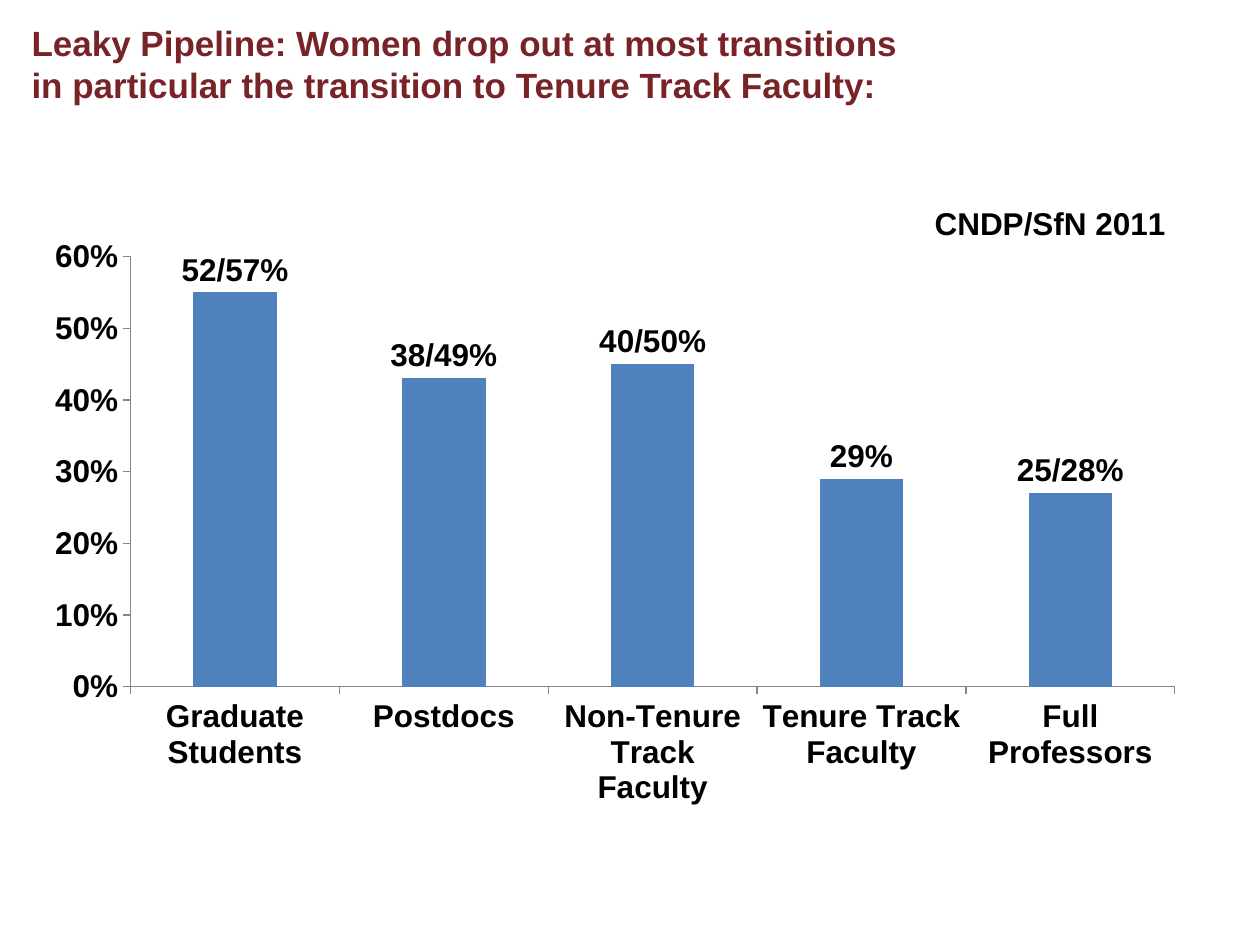
from dataclasses import dataclass
from typing import Optional

import pptx
import pptx.chart.data
import pptx.dml.color
import pptx.enum.chart
import pptx.enum.text
import pptx.oxml
import pptx.oxml.ns
import pptx.util

Inches = pptx.util.Inches
Pt = pptx.util.Pt
RGBColor = pptx.dml.color.RGBColor
qn = pptx.oxml.ns.qn

MAROON = RGBColor(0x78, 0x23, 0x27)
BLUE = RGBColor(0x4F, 0x81, 0xBD)
GRAY = RGBColor(0x86, 0x86, 0x86)
BLACK = RGBColor(0, 0, 0)
FONT = "Arial"


@dataclass
class Stage:
    name: str
    share: float
    label: Optional[str] = None


STAGES = [
    Stage("Graduate Students", 0.55, "52/57%"),
    Stage("Postdocs", 0.43, "38/49%"),
    Stage("Non-Tenure Track Faculty", 0.45, "40/50%"),
    Stage("Tenure Track Faculty", 0.29),
    Stage("Full Professors", 0.27, "25/28%"),
]


def style_font(font, size: int, color: RGBColor) -> None:
    font.name = FONT
    font.size = Pt(size)
    font.bold = True
    font.color.rgb = color


def set_layout(parent, index: int, **settings) -> None:
    """Give a chart part a manual layout, as child number index."""
    for old in parent.findall(qn("c:layout")):
        parent.remove(old)
    items = "".join(f'<c:{k} val="{v}"/>' for k, v in settings.items())
    parent.insert(index, pptx.oxml.parse_xml(
        f'<c:layout {pptx.oxml.ns.nsdecls("c")}>'
        f"<c:manualLayout>{items}</c:manualLayout></c:layout>"))


def add_title(s, text: str) -> None:
    sp = s.shapes.title
    sp.left, sp.top = Inches(0.25), Inches(0.17)
    sp.width, sp.height = Inches(7), Inches(0.92)
    tf = sp.text_frame
    tf.text = text
    tf.word_wrap = True
    tf.auto_size = pptx.enum.text.MSO_AUTO_SIZE.NONE
    tf.vertical_anchor = pptx.enum.text.MSO_ANCHOR.TOP
    tf.margin_left = tf.margin_right = tf.margin_top = tf.margin_bottom = 0
    p = tf.paragraphs[0]
    p.alignment = pptx.enum.text.PP_ALIGN.LEFT
    style_font(p.runs[0].font, 20, MAROON)


def add_stage_chart(s, stages: list[Stage]) -> None:
    data = pptx.chart.data.CategoryChartData(number_format="0%")
    data.categories = [stage.name for stage in stages]
    data.add_series("Series 1", [stage.share for stage in stages])
    chart = s.shapes.add_chart(
        pptx.enum.chart.XL_CHART_TYPE.COLUMN_CLUSTERED,
        Inches(0.25), Inches(1.25), Inches(9.25), Inches(5.25), data).chart
    chart.has_legend = False
    style_font(chart.font, 18, BLACK)

    # Chart title at the upper right
    tf = chart.chart_title.text_frame
    tf.text = "CNDP/SfN 2011"
    style_font(tf.paragraphs[0].runs[0].font, 18, BLACK)
    set_layout(chart.chart_title._element, 1,
               xMode="edge", yMode="edge", x=0.77, y=0.06)
    set_layout(chart._chartSpace.chart.plotArea, 0, layoutTarget="inner",
               xMode="edge", yMode="edge", x=0.085, y=0.15, w=0.896, h=0.65)

    # Axes
    for axis in (chart.category_axis, chart.value_axis):
        axis.has_major_gridlines = False
        axis.major_tick_mark = pptx.enum.chart.XL_TICK_MARK.OUTSIDE
        axis.format.line.color.rgb = GRAY
        style_font(axis.tick_labels.font, 18, BLACK)
    chart.value_axis.minimum_scale = 0
    chart.value_axis.maximum_scale = 0.6
    chart.value_axis.major_unit = 0.1
    chart.value_axis.tick_labels.number_format = "0%"
    chart.value_axis.tick_labels.number_format_is_linked = False

    # Columns and their labels
    plot = chart.plots[0]
    plot.gap_width = 150
    plot.vary_by_categories = False
    series = plot.series[0]
    series.format.fill.solid()
    series.format.fill.fore_color.rgb = BLUE
    outside = pptx.enum.chart.XL_LABEL_POSITION.OUTSIDE_END
    labels = series.data_labels
    labels.show_value = True
    labels.number_format = "0%"
    labels.number_format_is_linked = False
    labels.position = outside
    style_font(labels.font, 18, BLACK)
    for i, stage in enumerate(stages):
        if stage.label:
            label = series.points[i].data_label
            label.text_frame.text = stage.label
            label.position = outside
            style_font(label.text_frame.paragraphs[0].runs[0].font, 18, BLACK)


def main() -> None:
    prs = pptx.Presentation()
    prs.slide_width, prs.slide_height = Inches(10), Inches(7.5)
    s = prs.slides.add_slide(prs.slide_layouts[5])
    add_title(s, "Leaky Pipeline: Women drop out at most transitions "
                 "in particular the transition to Tenure Track Faculty:")
    add_stage_chart(s, STAGES)
    prs.save("out.pptx")


if __name__ == "__main__":
    main()
